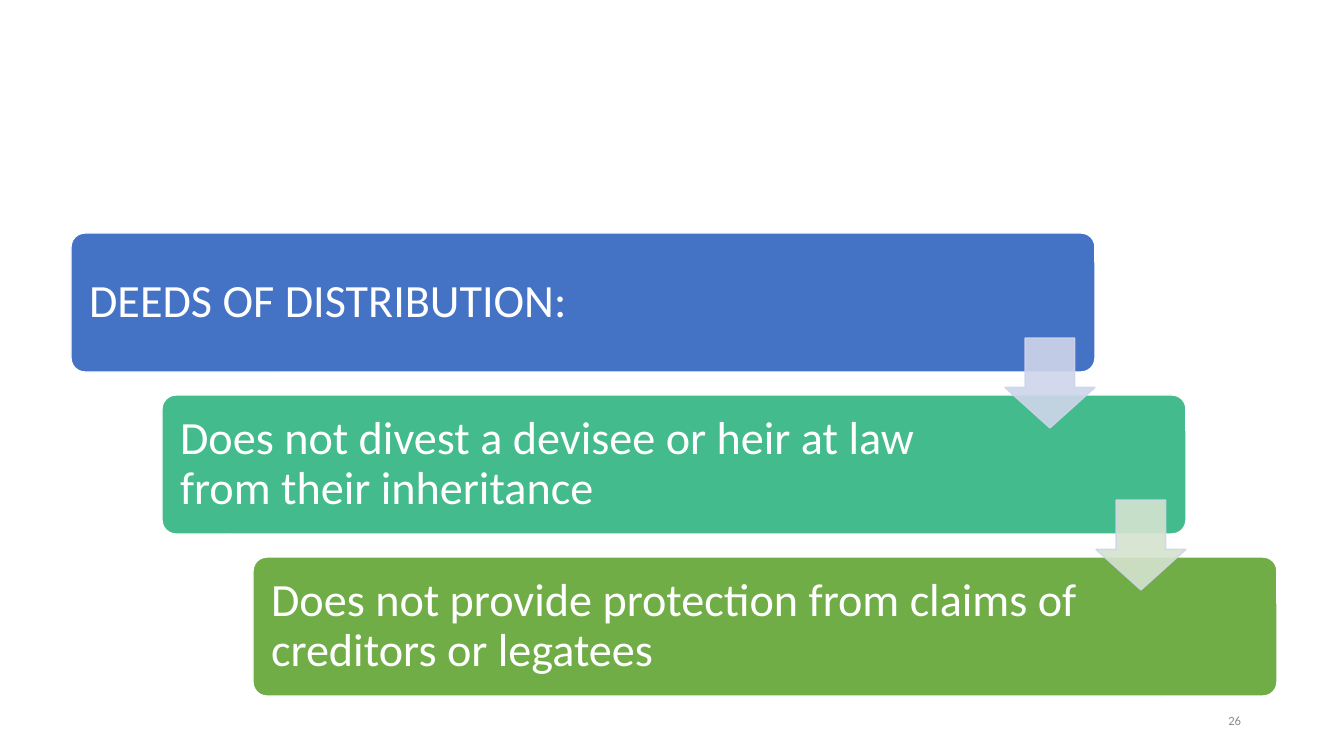
"""Build the slide on deeds of distribution as three descending steps."""
from lxml import etree
from pptx import Presentation
from pptx.dml.color import RGBColor
from pptx.enum.shapes import MSO_SHAPE
from pptx.enum.text import MSO_ANCHOR, PP_ALIGN
from pptx.oxml.ns import qn
from pptx.util import Pt

ROUNDED = MSO_SHAPE.ROUNDED_RECTANGLE
DOWN_ARROW = MSO_SHAPE.DOWN_ARROW
MIDDLE = MSO_ANCHOR.MIDDLE
LEFT, RIGHT = PP_ALIGN.LEFT, PP_ALIGN.RIGHT

COLORS = {
    "white": "FFFFFF",
    "blue": "4472C4",
    "teal": "43BB8D",
    "green": "70AD47",
    "pale blue": "CFD5EA",
    "pale green": "D5E3CF",
    "gray": "8C8C8C",
}
FONT = "Calibri"

STEPS = [
    ("DEEDS OF DISTRIBUTION:", "blue", 156),
    ("Does not divest a devisee or heir at law from their inheritance", "teal", 194),
    ("Does not provide protection from claims of creditors or legatees", "green", 194),
]
ARROW_FILLS = ["pale blue", "pale green"]
PAGE_NUMBER = "26"

SLIDE_W, SLIDE_H = 1344, 756
STEP_X, STEP_Y, STEP_W, STEP_H = 71, 233, 1024, 139
SHIFT_X, SHIFT_Y = 91, 162
ARROW_X, ARROW_Y, ARROW_SIZE = 1005, 338, 90
INSET = 14
ARROW_OPACITY = 90
EMU_PER_PX = 914400 / 100.8


def px(length):
    return round(length * EMU_PER_PX)


def color(name):
    return RGBColor.from_string(COLORS[name])


def add_block(slide, kind, box, adjustments, fill, line):
    block = slide.shapes.add_shape(kind, *map(px, box))
    block.shadow.inherit = False
    for index, value in enumerate(adjustments):
        block.adjustments[index] = value
    block.fill.solid()
    block.fill.fore_color.rgb = color(fill)
    block.line.color.rgb = color(line)
    block.line.width = Pt(1)
    return block


def write(frame, text, size, ink, align):
    frame.word_wrap = True
    frame.vertical_anchor = MIDDLE
    paragraph = frame.paragraphs[0]
    paragraph.text = text
    paragraph.alignment = align
    paragraph.font.name = FONT
    paragraph.font.size = Pt(size)
    paragraph.font.color.rgb = color(ink)
    return paragraph


def add_step(slide, index, text, fill, right_inset):
    box = (STEP_X + index * SHIFT_X, STEP_Y + index * SHIFT_Y, STEP_W, STEP_H)
    step = add_block(slide, ROUNDED, box, [0.1], fill, "white")
    frame = step.text_frame
    frame.margin_left = frame.margin_top = frame.margin_bottom = px(INSET)
    frame.margin_right = px(right_inset)
    write(frame, text, 33, "white", LEFT).line_spacing = 0.9


def add_arrow(slide, index, fill):
    box = (ARROW_X + index * SHIFT_X, ARROW_Y + index * SHIFT_Y, ARROW_SIZE, ARROW_SIZE)
    arrow = add_block(slide, DOWN_ARROW, box, [0.55, 0.45], fill, "pale blue")
    for tint in arrow.element.spPr.iter(qn("a:srgbClr")):
        etree.SubElement(tint, qn("a:alpha"), val=str(ARROW_OPACITY * 1000))


def main():
    deck = Presentation()
    deck.slide_width, deck.slide_height = px(SLIDE_W), px(SLIDE_H)
    slide = deck.slides.add_slide(deck.slide_layouts[6])
    for index, step in enumerate(STEPS):
        add_step(slide, index, *step)
    for index, fill in enumerate(ARROW_FILLS):
        add_arrow(slide, index, fill)
    page = slide.shapes.add_textbox(px(949), px(701), px(302), px(40))
    write(page.text_frame, PAGE_NUMBER, 9, "gray", RIGHT)
    deck.save("out.pptx")


if __name__ == "__main__":
    main()
